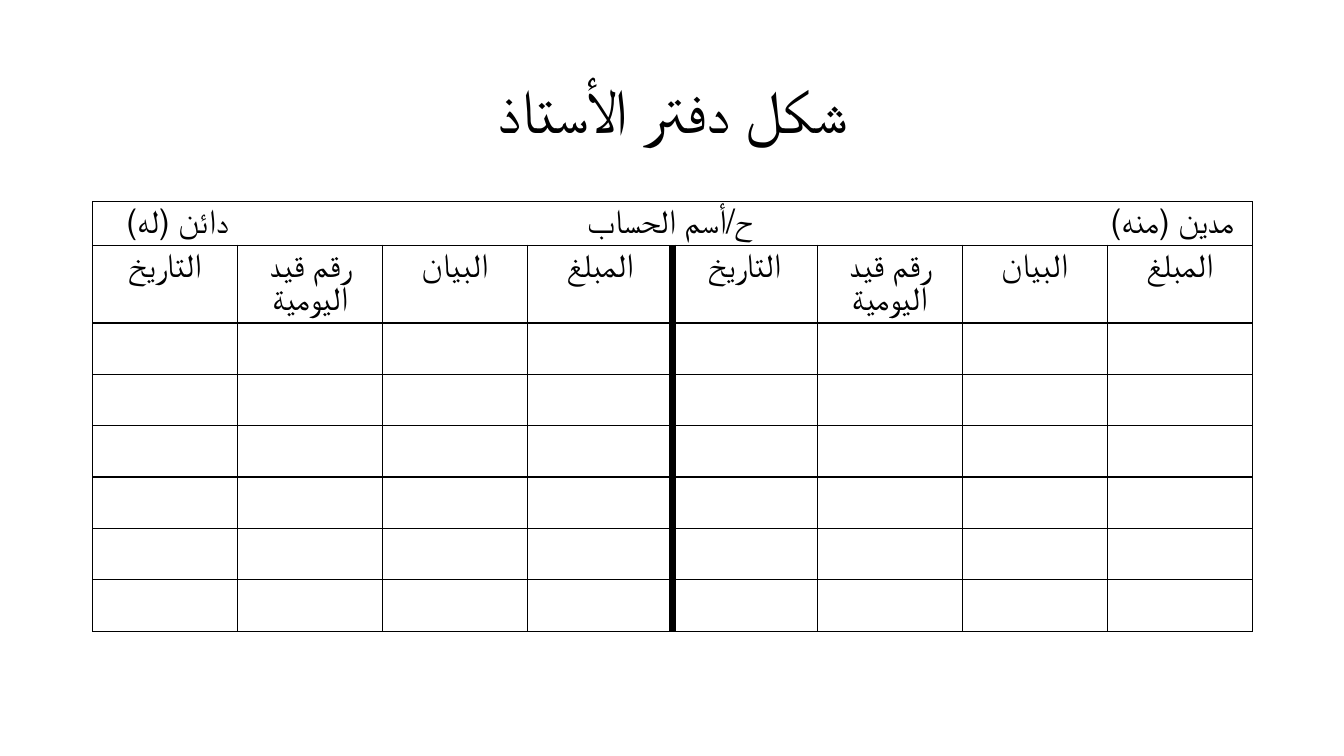
from lxml.etree import SubElement
from pptx import Presentation
from pptx.dml.color import RGBColor
from pptx.enum.text import MSO_ANCHOR, PP_ALIGN
from pptx.oxml.ns import qn
from pptx.util import Inches, Pt

TITLE = "شكل دفتر الأستاذ"
ACCOUNT_SIDES = ["مدين (منه)", "ح/أسم الحساب", "دائن (له)"]
SIDE_HEADINGS = ["التاريخ", "رقم قيد اليومية", "البيان", "المبلغ"]
HEADINGS = SIDE_HEADINGS * 2
ENTRY_ROWS = 6
ROW_HEIGHTS = [0.43, 0.77] + [0.51] * ENTRY_ROWS
TAB_CENTRES = [5.59, 10.48]
FONT = "Calibri"
INK = "000000"
LEFT, WIDTH = 0.92, 11.5
TABLE_TOP = 2
THIN, THICK = 1, 6


def colour(value):
    return RGBColor.from_string(value)


def add_span(para, text, size):
    span = para.add_run()
    span.text = text
    span.font.name = FONT
    span.font.size = Pt(size)
    span.font.color.rgb = colour(INK)


def set_right_to_left(para):
    para._p.get_or_add_pPr().set("rtl", "1")


def add_centre_tabs(para, positions):
    tabs = SubElement(para._p.get_or_add_pPr(), qn("a:tabLst"))
    for position in positions:
        SubElement(tabs, qn("a:tab"), pos=str(Inches(position)), algn="ctr")


def set_borders(cell, left=THIN, right=THIN):
    properties = cell._tc.get_or_add_tcPr()
    for side, width in (("L", left), ("R", right), ("T", THIN), ("B", THIN)):
        line = SubElement(properties, qn("a:ln" + side), w=str(Pt(width)))
        fill = SubElement(line, qn("a:solidFill"))
        SubElement(fill, qn("a:srgbClr"), val=INK)


def add_title(page):
    title = page.shapes.title
    title.left, title.top = Inches(LEFT), Inches(0.4)
    title.width, title.height = Inches(WIDTH), Inches(1.45)
    title.text_frame.vertical_anchor = MSO_ANCHOR.MIDDLE
    para = title.text_frame.paragraphs[0]
    para.alignment = PP_ALIGN.CENTER
    para.line_spacing = 0.9
    set_right_to_left(para)
    add_span(para, TITLE, 44)


def add_ledger(page):
    count = len(HEADINGS)
    middle = count // 2
    frame = page.shapes.add_table(
        len(ROW_HEIGHTS), count, Inches(LEFT), Inches(TABLE_TOP),
        Inches(WIDTH), Inches(sum(ROW_HEIGHTS)))
    ledger = frame.table
    ledger.first_row = ledger.horz_banding = False
    for column in ledger.columns:
        column.width = Inches(WIDTH / count)
    for row, height in zip(ledger.rows, ROW_HEIGHTS):
        row.height = Inches(height)

    for r in range(len(ROW_HEIGHTS)):
        for c in range(count):
            cell = ledger.cell(r, c)
            set_borders(
                cell,
                left=THICK if r and c == middle else THIN,
                right=THICK if r and c == middle - 1 else THIN)
            cell.fill.background()

    account = ledger.cell(0, 0)
    account.merge(ledger.cell(0, count - 1))
    account.margin_right = Inches(0.18)
    para = account.text_frame.paragraphs[0]
    para.alignment = PP_ALIGN.RIGHT
    set_right_to_left(para)
    add_centre_tabs(para, TAB_CENTRES)
    add_span(para, "\t".join(ACCOUNT_SIDES), 24)

    for c, heading in enumerate(HEADINGS):
        para = ledger.cell(1, c).text_frame.paragraphs[0]
        para.alignment = PP_ALIGN.CENTER
        add_span(para, heading, 24)


def main():
    deck = Presentation()
    deck.slide_width, deck.slide_height = Inches(13.33), Inches(7.5)
    page = deck.slides.add_slide(deck.slide_layouts[5])
    add_title(page)
    add_ledger(page)
    deck.save("out.pptx")


if __name__ == "__main__":
    main()
